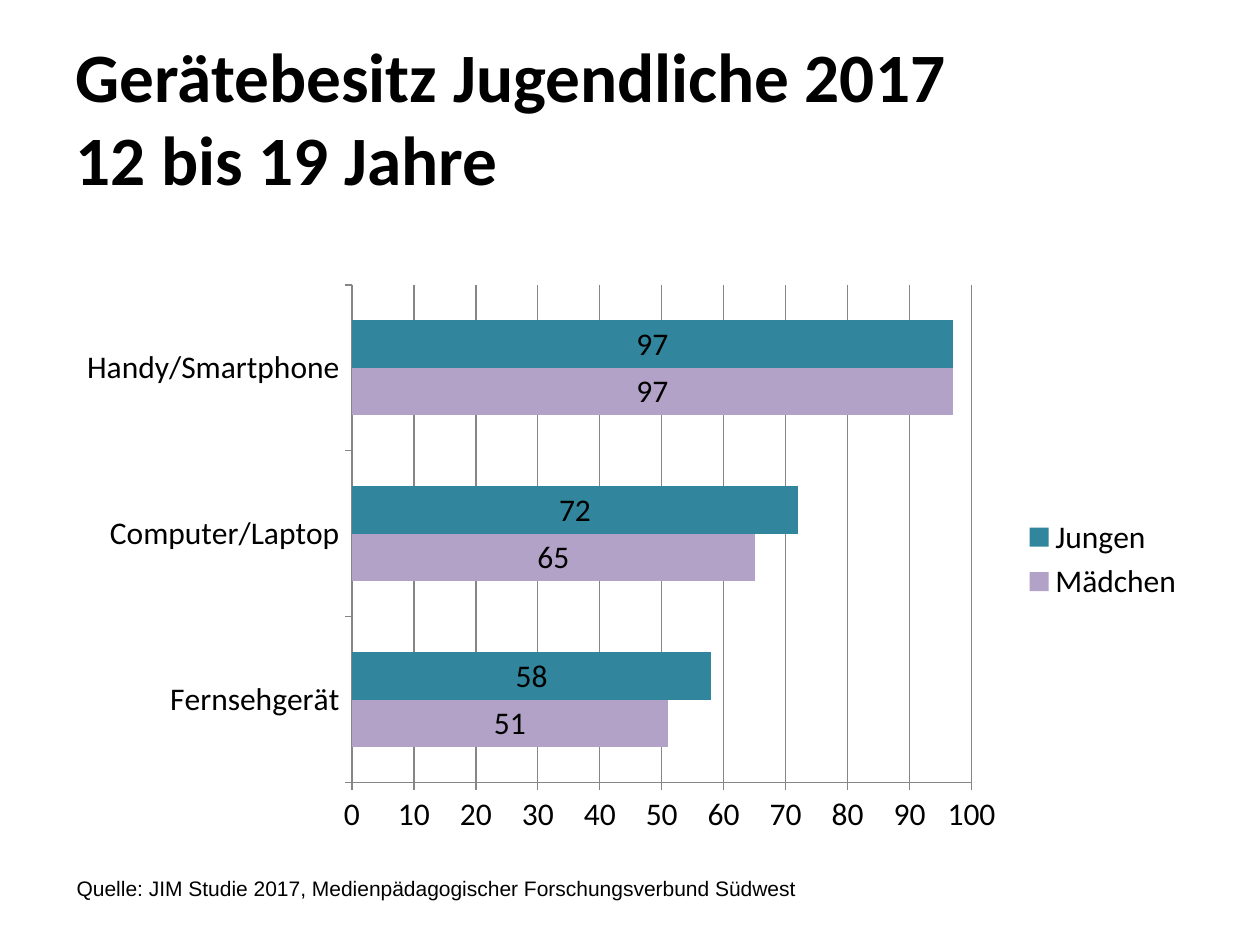
from dataclasses import dataclass

from lxml.etree import SubElement
from pptx import Presentation
from pptx.chart.chart import Chart
from pptx.chart.data import CategoryChartData
from pptx.dml.color import RGBColor
from pptx.enum.chart import (
    XL_CHART_TYPE as ChartType,
    XL_LABEL_POSITION as LabelPosition,
    XL_LEGEND_POSITION as LegendPosition,
    XL_TICK_MARK as TickMark,
)
from pptx.enum.text import MSO_ANCHOR as Anchor, PP_ALIGN as Align
from pptx.oxml.ns import qn
from pptx.text.text import Font
from pptx.util import Inches, Pt

BLACK = "000000"
GRID_GREY = "868686"


@dataclass
class Box:
    left: float
    top: float
    width: float
    height: float

    def lengths(self) -> list[int]:
        return [Inches(n) for n in (self.left, self.top, self.width, self.height)]


@dataclass
class Group:
    name: str
    values: tuple[int, ...]
    color: str


TITLE_BOX = Box(0.5, 0.3, 9, 1.25)
CHART_BOX = Box(0.51, 2.18, 8.99, 4.52)
PLOT_BOX = Box(2.79, 2.26, 4.92, 3.95)
SOURCE_BOX = Box(0.51, 6.9, 8.9, 0.3)

DEVICES = ("Fernsehgerät", "Computer/Laptop", "Handy/Smartphone")
GROUPS = (
    Group("Mädchen", (51, 65, 97), "B3A2C7"),
    Group("Jungen", (58, 72, 97), "31859C"),
)

TITLE_FORMAT = {"name": "Calibri", "size": Pt(39.6), "bold": True}
CHART_FORMAT = {"name": "Calibri", "size": Pt(18), "bold": False}
SOURCE_FORMAT = {"name": "Arial", "size": Pt(12)}


def set_color(color_format, value: str) -> None:
    color_format.rgb = RGBColor.from_string(value)


def format_font(font: Font, values: dict) -> None:
    for name, value in values.items():
        setattr(font, name, value)
    set_color(font.color, BLACK)


def write_text(shape, text: str, box: Box, values: dict, anchor: Anchor) -> None:
    shape.left, shape.top, shape.width, shape.height = box.lengths()
    frame = shape.text_frame
    frame.word_wrap = True
    frame.vertical_anchor = anchor
    frame.text = text
    paragraph = frame.paragraphs[0]
    paragraph.alignment = Align.LEFT
    for run in paragraph.runs:
        format_font(run.font, values)


def place_plot(chart: Chart, plot: Box, frame: Box) -> None:
    """Fix the inner plot area as fractions of the chart frame."""
    area = chart.plots[0]._element.getparent()
    layout = area.find(qn("c:layout"))
    if layout is None:
        layout = SubElement(area, qn("c:layout"))
        area.insert(0, layout)
    manual = SubElement(layout, qn("c:manualLayout"))
    settings = {
        "layoutTarget": "inner",
        "xMode": "edge",
        "yMode": "edge",
        "x": round((plot.left - frame.left) / frame.width, 3),
        "y": round((plot.top - frame.top) / frame.height, 3),
        "w": round(plot.width / frame.width, 3),
        "h": round(plot.height / frame.height, 3),
    }
    for name, value in settings.items():
        SubElement(manual, qn(f"c:{name}")).set("val", str(value))


def add_device_chart(slide) -> None:
    data = CategoryChartData()
    data.categories = DEVICES
    for group in GROUPS:
        data.add_series(group.name, group.values)
    chart = slide.shapes.add_chart(
        ChartType.BAR_CLUSTERED, *CHART_BOX.lengths(), data
    ).chart
    chart.has_title = False
    format_font(chart.font, CHART_FORMAT)
    place_plot(chart, PLOT_BOX, CHART_BOX)

    # Bars and their values
    plot = chart.plots[0]
    plot.gap_width = 150
    plot.overlap = 0
    plot.vary_by_categories = False
    for series, group in zip(plot.series, GROUPS):
        series.format.fill.solid()
        set_color(series.format.fill.fore_color, group.color)
        labels = series.data_labels
        labels.show_value = True
        labels.position = LabelPosition.CENTER

    # Axes and gridlines
    value_axis = chart.value_axis
    value_axis.minimum_scale, value_axis.maximum_scale = 0, 100
    value_axis.major_unit = 10
    value_axis.has_major_gridlines = True
    for axis in (chart.category_axis, value_axis):
        axis.major_tick_mark = TickMark.OUTSIDE
        axis.minor_tick_mark = TickMark.NONE
    for part in (chart.category_axis, value_axis, value_axis.major_gridlines):
        part.format.line.width = Pt(0.75)
        set_color(part.format.line.color, GRID_GREY)

    # Legend
    chart.has_legend = True
    chart.legend.position = LegendPosition.RIGHT
    chart.legend.include_in_layout = False


def main() -> None:
    presentation = Presentation()
    presentation.slide_width, presentation.slide_height = Inches(10), Inches(7.5)
    slide = presentation.slides.add_slide(presentation.slide_layouts[5])

    write_text(
        slide.shapes.title,
        "Gerätebesitz Jugendliche 2017\v12 bis 19 Jahre",
        TITLE_BOX,
        TITLE_FORMAT,
        Anchor.MIDDLE,
    )
    add_device_chart(slide)
    write_text(
        slide.shapes.add_textbox(*SOURCE_BOX.lengths()),
        "Quelle: JIM Studie 2017, Medienpädagogischer Forschungsverbund Südwest",
        SOURCE_BOX,
        SOURCE_FORMAT,
        Anchor.TOP,
    )
    presentation.save("out.pptx")


if __name__ == "__main__":
    main()
